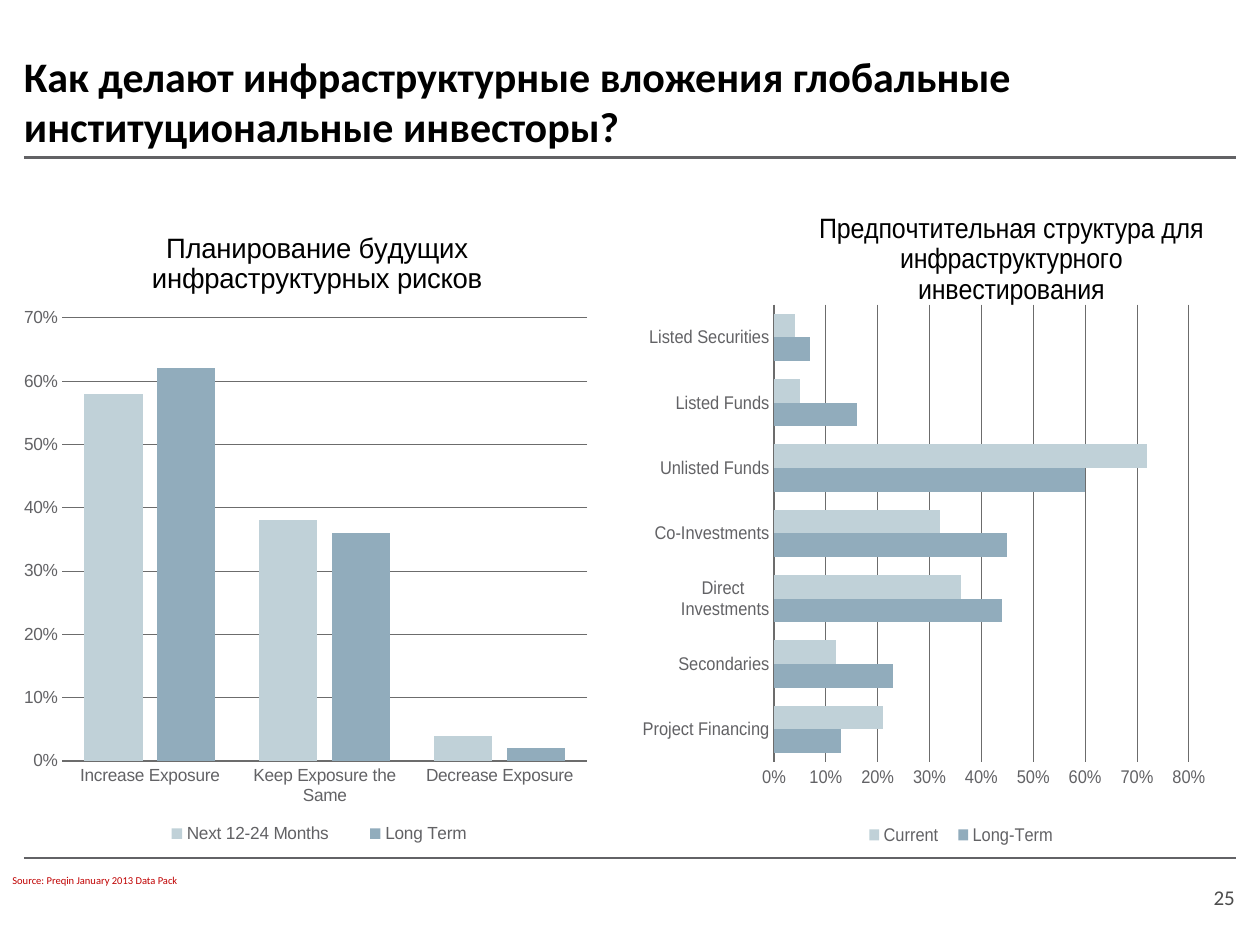
from lxml import etree
from pptx import Presentation
from pptx.chart.data import CategoryChartData
from pptx.dml.color import RGBColor
from pptx.enum.chart import XL_CHART_TYPE, XL_LEGEND_POSITION, XL_TICK_MARK
from pptx.enum.shapes import MSO_CONNECTOR
from pptx.enum.text import MSO_ANCHOR, PP_ALIGN
from pptx.oxml import parse_xml
from pptx.oxml.ns import nsdecls, qn
from pptx.util import Inches, Pt

COLUMN, BAR = XL_CHART_TYPE.COLUMN_CLUSTERED, XL_CHART_TYPE.BAR_CLUSTERED
NO_TICK = XL_TICK_MARK.NONE
BOTTOM = MSO_ANCHOR.BOTTOM
LEFT, RIGHT = PP_ALIGN.LEFT, PP_ALIGN.RIGHT

GRAY, GRID, BLACK = "626265", "6C6C6C", "000000"
PALE, BLUE = "C0D1D8", "91ACBC"
MARGIN, SLIDE_WIDTH = 0.19, 10

TITLE = "Как делают инфраструктурные вложения глобальные институциональные инвесторы?"
SOURCE = "Source: Preqin January 2013 Data Pack"
PAGE_NUMBER = "25"

RULES = [(1.25, 1.5), (6.81, 1)]  # height on the slide, line width

CHARTS = [
    {
        "kind": COLUMN, "place": (0.19, 1.63, 4.56, 5.25), "size": 10,
        "title": "Планирование будущих инфраструктурных рисков",
        "title_at": (0.2, 0.03), "plot": (0.05, 0.17, 0.93, 0.67),
        "legend": (0.18, 0.92, 0.65, 0.06),
        "overlap": -25, "maximum": 0.7,
        "categories": ["Increase Exposure", "Keep Exposure the Same", "Decrease Exposure"],
        "series": [
            ("Next 12-24 Months", PALE, [0.58, 0.38, 0.04]),
            ("Long Term", BLUE, [0.62, 0.36, 0.02]),
        ],
    },
    {
        "kind": BAR, "place": (5.1, 1.63, 4.49, 5.26), "size": 10.5,
        "title": "Предпочтительная структура для инфраструктурного инвестирования",
        "title_at": (0.23, 0), "plot": (0.15, 0.15, 0.82, 0.69),
        "legend": (0.31, 0.92, 0.42, 0.06),
        "overlap": 0, "maximum": 0.8,
        "categories": ["Project Financing", "Secondaries", "Direct \nInvestments",
                       "Co-Investments", "Unlisted Funds", "Listed Funds",
                       "Listed Securities"],
        "series": [
            ("Long-Term", BLUE, [0.13, 0.23, 0.44, 0.45, 0.6, 0.16, 0.07]),
            ("Current", PALE, [0.21, 0.12, 0.36, 0.32, 0.72, 0.05, 0.04]),
        ],
    },
]


def color(value):
    return RGBColor.from_string(value)


def style_font(font, name, size, shade, bold=False):
    font.name, font.size, font.bold = name, Pt(size), bold
    font.color.rgb = color(shade)


def add_text(page, text, place, size, shade, margins, bold=False, align=LEFT, anchor=None):
    box = page.shapes.add_textbox(*map(Inches, place))
    frame = box.text_frame
    frame.word_wrap = True
    frame.vertical_anchor = anchor
    frame.margin_left = frame.margin_right = Inches(margins[0])
    frame.margin_top = frame.margin_bottom = Inches(margins[1])
    frame.text = text
    para = frame.paragraphs[0]
    para.alignment = align
    style_font(para.runs[0].font, "Calibri", size, shade, bold)


def add_rule(page, top, width):
    line = page.shapes.add_connector(
        MSO_CONNECTOR.STRAIGHT, Inches(MARGIN), Inches(top),
        Inches(SLIDE_WIDTH - MARGIN), Inches(top))
    line.line.color.rgb = color(GRAY)
    line.line.width = Pt(width)
    etree.SubElement(line._element.spPr, qn("a:effectLst"))


def set_layout(part, position, before=None, inner=False):
    """Place a chart part by fractions of the chart (x, y, w, h), after its child `before`."""
    for old in part.findall(qn("c:layout")):
        part.remove(old)
    tags = '<c:layoutTarget val="inner"/>' if inner else ""
    tags += '<c:xMode val="edge"/><c:yMode val="edge"/>'
    tags += "".join(f'<c:{tag} val="{value}"/>' for tag, value in zip("xywh", position))
    layout = parse_xml(
        f'<c:layout {nsdecls("c")}><c:manualLayout>{tags}</c:manualLayout></c:layout>')
    if before:
        part.find(qn(before)).addnext(layout)
    else:
        part.insert(0, layout)
    return layout


def place_title(chart, position):
    title = chart.chart_title._element
    for old in title.findall(qn("c:overlay")):
        title.remove(old)
    layout = set_layout(title, position, before="c:tx")
    layout.addnext(parse_xml(f'<c:overlay {nsdecls("c")} val="1"/>'))


def add_chart(page, item):
    data = CategoryChartData(number_format="0%")
    data.categories = item["categories"]
    for name, _, values in item["series"]:
        data.add_series(name, values)
    chart = page.shapes.add_chart(item["kind"], *map(Inches, item["place"]), data).chart
    style_font(chart.font, "Arial", item["size"], GRAY)

    chart.has_title = True
    chart.chart_title.text_frame.text = item["title"]
    span = chart.chart_title.text_frame.paragraphs[0].runs[0]
    style_font(span.font, "Arial", 16, BLACK)
    place_title(chart, item["title_at"])
    set_layout(chart._chartSpace.chart.plotArea, item["plot"], inner=True)

    chart.has_legend = True
    chart.legend.position = XL_LEGEND_POSITION.BOTTOM
    chart.legend.include_in_layout = False
    set_layout(chart.legend._element, item["legend"], before="c:legendPos")

    plot = chart.plots[0]
    plot.gap_width, plot.overlap = 75, item["overlap"]
    plot.vary_by_categories = False
    for series, (_, shade, _) in zip(plot.series, item["series"]):
        series.format.fill.solid()
        series.format.fill.fore_color.rgb = color(shade)

    for axis in (chart.category_axis, chart.value_axis):
        axis.major_tick_mark = axis.minor_tick_mark = NO_TICK
    chart.category_axis.format.line.color.rgb = color(GRID)
    values = chart.value_axis
    values.minimum_scale, values.maximum_scale, values.major_unit = 0, item["maximum"], 0.1
    values.tick_labels.number_format = "0%"
    values.tick_labels.number_format_is_linked = False
    values.format.line.fill.background()
    grid = values.major_gridlines.format.line
    grid.color.rgb = color(GRID)
    grid.width = Pt(0.5)


def main():
    deck = Presentation()
    deck.slide_width, deck.slide_height = Inches(SLIDE_WIDTH), Inches(7.5)
    page = deck.slides.add_slide(deck.slide_layouts[6])
    for top, width in RULES:
        add_rule(page, top, width)
    add_text(page, PAGE_NUMBER, (8.89, 7.04, 0.91, 0.18), 12, "4D4D4D", (0, 0),
             align=RIGHT, anchor=BOTTOM)
    add_text(page, TITLE, (MARGIN, 0.6, 9.62, 0.65), 24, BLACK, (0, 0.05),
             bold=True, anchor=BOTTOM)
    add_text(page, SOURCE, (0, 6.89, 9.25, 0.35), 6, "C00000", (0.1, 0.05))
    for item in CHARTS:
        add_chart(page, item)
    deck.save("out.pptx")


if __name__ == "__main__":
    main()
